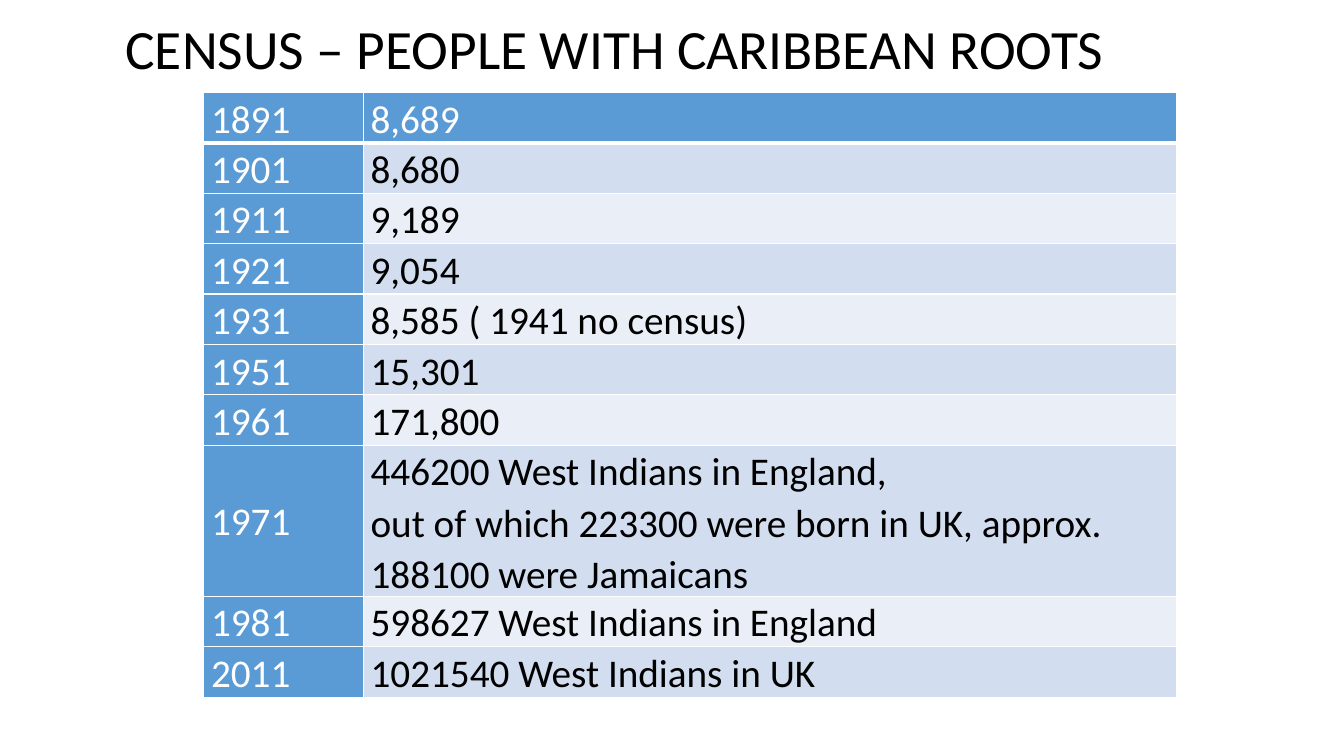
from lxml.etree import SubElement
from pptx import Presentation
from pptx.dml.color import RGBColor
from pptx.enum.text import MSO_ANCHOR as ANCHOR
from pptx.oxml.ns import qn
from pptx.util import Pt

PX = 9525  # 96 px to the inch
FONT = "Calibri"
BLACK = RGBColor(0x00, 0x00, 0x00)
WHITE = RGBColor(0xFF, 0xFF, 0xFF)
BLUE = RGBColor(0x5B, 0x9B, 0xD5)
BANDS = (RGBColor(0xEA, 0xEF, 0xF7), RGBColor(0xD2, 0xDE, 0xEF))

TITLE = "CENSUS – PEOPLE WITH CARIBBEAN ROOTS"
CENSUS = [
    ("1891", "8,689"),
    ("1901", "8,680"),
    ("1911", "9,189"),
    ("1921", "9,054"),
    ("1931", "8,585 ( 1941 no census)"),
    ("1951", "15,301"),
    ("1961", "171,800"),
    ("1971", "446200 West Indians in England,\n"
             "out of which 223300 were born in UK, approx. 188100 were Jamaicans"),
    ("1981", "598627 West Indians in England"),
    ("2011", "1021540 West Indians in UK"),
]


def write(tf, text, size, color, spacing):
    for i, line in enumerate(text.split("\n")):
        p = tf.add_paragraph() if i else tf.paragraphs[0]
        p.line_spacing = spacing
        r = p.add_run()
        r.text = line
        r.font.name = FONT
        r.font.size = Pt(size)
        r.font.color.rgb = color


def add_borders(cell, bottom):
    tcPr = cell._tc.get_or_add_tcPr()
    for side, width in (("L", 1), ("R", 1), ("T", 1), ("B", bottom)):
        ln = SubElement(tcPr, qn("a:ln" + side), w=str(Pt(width)))
        fill = SubElement(ln, qn("a:solidFill"))
        SubElement(fill, qn("a:srgbClr"), val=str(WHITE))


def add_title(s, x, y, w, h):
    tf = s.shapes.add_textbox(x * PX, y * PX, w * PX, h * PX).text_frame
    tf.word_wrap = True
    tf.vertical_anchor = ANCHOR.MIDDLE
    write(tf, TITLE, 39.6, BLACK, 0.9)


def add_census_table(s, x, y, w, h, year_w=152, row_h=40):
    frame = s.shapes.add_table(len(CENSUS), 2, x * PX, y * PX, w * PX, h * PX)
    table = frame.table
    table.first_col = True
    for column, width in zip(table.columns, (year_w, w - year_w)):
        column.width = width * PX
    for i, values in enumerate(CENSUS):
        table.rows[i].height = row_h * PX  # rows grow to fit their text
        for j, text in enumerate(values):
            cell = table.cell(i, j)
            heading = i == 0 or j == 0
            cell.margin_left = cell.margin_right = 7 * PX
            cell.margin_top = cell.margin_bottom = 0
            cell.vertical_anchor = ANCHOR.MIDDLE
            add_borders(cell, bottom=1 if i else 3)
            cell.fill.solid()
            cell.fill.fore_color.rgb = BLUE if heading else BANDS[i % 2]
            write(cell.text_frame, text, 28, WHITE if heading else BLACK, 1.07)
    frame.height = h * PX


def main():
    prs = Presentation()
    prs.slide_width, prs.slide_height = 1280 * PX, 720 * PX
    s = prs.slides.add_slide(prs.slide_layouts[6])
    add_title(s, 110, -11, 1040, 120)
    add_census_table(s, 194, 88, 927, 554)
    prs.save("out.pptx")


if __name__ == "__main__":
    main()
